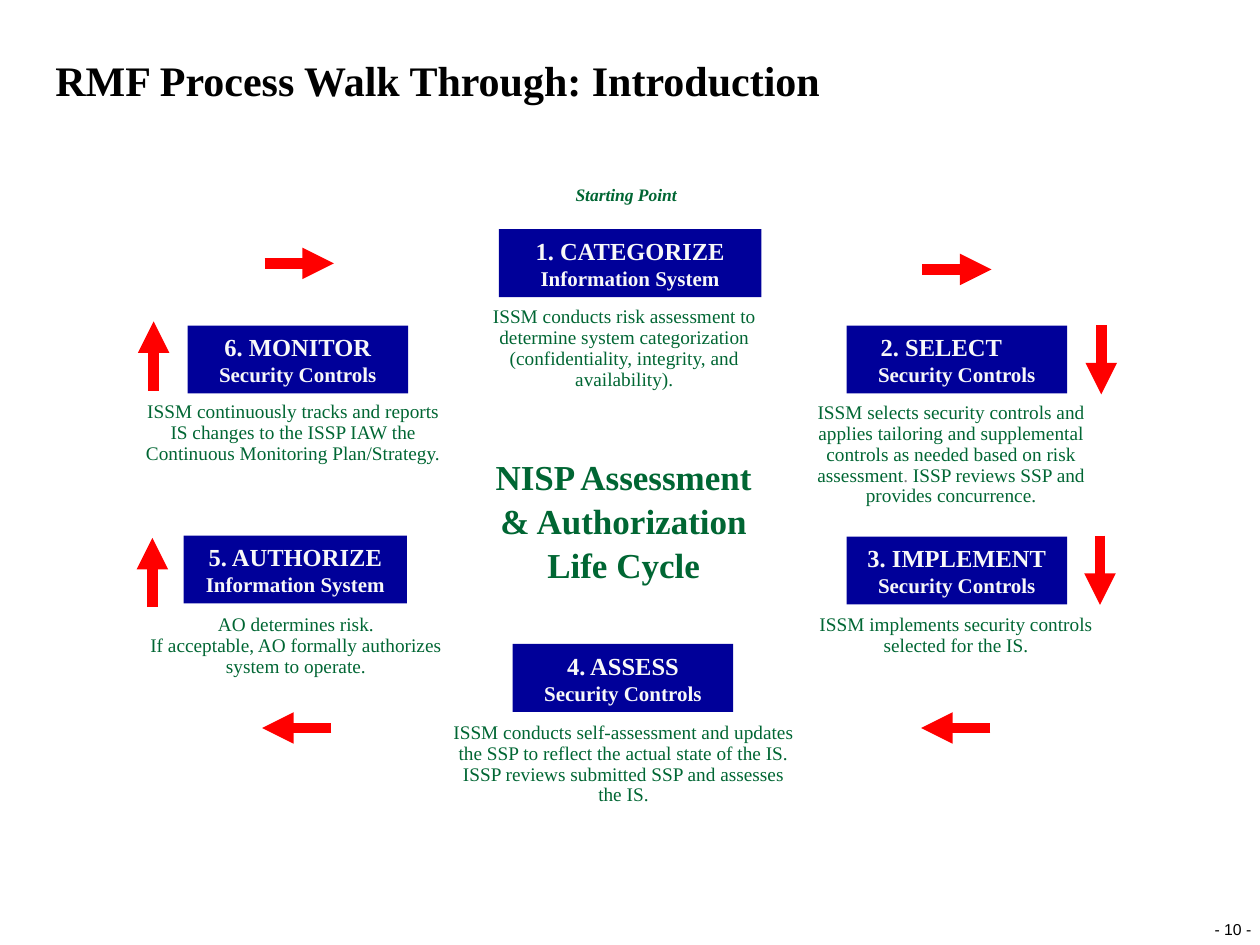
from dataclasses import dataclass

from lxml.etree import SubElement
from pptx import Presentation
from pptx.dml.color import RGBColor
from pptx.enum.shapes import MSO_CONNECTOR, MSO_SHAPE
from pptx.enum.text import MSO_ANCHOR, PP_ALIGN
from pptx.oxml.ns import qn
from pptx.util import Pt


@dataclass(frozen=True)
class Theme:
    font: str = "Times New Roman"
    footer_font: str = "Arial"
    black: str = "000000"
    green: str = "006633"
    navy: str = "000099"
    white: str = "F8F8F8"
    red: str = "FF0000"
    gray: str = "808080"
    title: int = 24
    hub: int = 20
    step: int = 14
    subject: int = 12
    caption: int = 11
    start: int = 10
    footer: int = 9
    arrow: int = 6


class SlideBuilder:
    def __init__(self, slide, theme):
        self.slide = slide
        self.theme = theme

    def style(self, span, size, color, bold=False, italic=False, font=None):
        span.font.name = font or self.theme.font
        span.font.size = Pt(size)
        span.font.color.rgb = RGBColor.from_string(color)
        span.font.bold = bold
        span.font.italic = italic

    def text(self, frame, words, size, color, spacing=1.0, align=PP_ALIGN.CENTER,
             inset=True, anchor=MSO_ANCHOR.TOP, wrap=True, **look):
        box = self.slide.shapes.add_textbox(*map(Pt, frame))
        body = box.text_frame
        body.text = words
        body.word_wrap = wrap
        body.vertical_anchor = anchor
        if not inset:
            body.margin_left = body.margin_right = 0
            body.margin_top = body.margin_bottom = 0
        for para in body.paragraphs:
            para.alignment = align
            para.line_spacing = spacing
            for span in para.runs:
                self.style(span, size, color, **look)
        return box

    def caption(self, left, top, width, height, words):
        return self.text((left, top, width, height), words,
                         self.theme.caption, self.theme.green, spacing=0.9)

    def step(self, left, top, width, name, subject):
        box = self.slide.shapes.add_shape(
            MSO_SHAPE.RECTANGLE, Pt(left), Pt(top), Pt(width), Pt(38.8))
        box.shadow.inherit = False
        box.fill.solid()
        box.fill.fore_color.rgb = RGBColor.from_string(self.theme.navy)
        box.line.fill.background()
        body = box.text_frame
        body.text = f"{name}\n{subject}"
        body.word_wrap = True
        body.vertical_anchor = MSO_ANCHOR.MIDDLE
        for para, size in zip(body.paragraphs, (self.theme.step, self.theme.subject)):
            para.alignment = PP_ALIGN.CENTER
            self.style(para.runs[0], size, self.theme.white, bold=True)
        return box

    def arrow(self, left, top, across, down):
        line = self.slide.shapes.add_connector(
            MSO_CONNECTOR.STRAIGHT, Pt(left), Pt(top), Pt(left + across), Pt(top + down))
        line.line.color.rgb = RGBColor.from_string(self.theme.red)
        line.line.width = Pt(self.theme.arrow)
        SubElement(line.line._get_or_add_ln(), qn("a:tailEnd"), type="triangle")
        SubElement(line._element.spPr, qn("a:effectLst"))


CONTROLS = "Security Controls"
SYSTEM = "Information System"

# Step boxes: left, top, width, name, subject
STEPS = [
    (285.1, 131, 150, "1. CATEGORIZE", SYSTEM),
    (483.8, 186, 126, "2. SELECT", CONTROLS),
    (483.8, 306.6, 126, "3. IMPLEMENT", CONTROLS),
    (293, 368, 126, "4. ASSESS", CONTROLS),
    (105, 306, 127.6, "5. AUTHORIZE", SYSTEM),
    (107.2, 186, 126, "6. MONITOR", CONTROLS),
]

# Captions: left, top, width, height, words
CAPTIONS = [
    (268.5, 172, 176.5, 55,
     "ISSM conducts risk assessment to determine system categorization "
     "(confidentiality, integrity, and availability)."),
    (448.5, 226.8, 190, 67,
     "ISSM selects security controls and applies tailoring and supplemental "
     "controls as needed based on risk assessment"),
    (447, 347.8, 198.7, 31,
     "ISSM implements security controls selected for the IS."),
    (249.8, 409.5, 213, 55,
     "ISSM conducts self-assessment and updates the SSP to reflect the actual state "
     "of the IS. ISSP reviews submitted SSP and assesses the IS."),
    (70.5, 347.8, 197.3, 43,
     "AO determines risk.\n"
     "If acceptable, AO formally authorizes system to operate."),
    (71, 226.3, 193, 43,
     "ISSM continuously tracks and reports IS changes to the ISSP IAW the "
     "Continuous Monitoring Plan/Strategy."),
]

# Arrows, clockwise: left, top, across, down
REACH = 39.6
ARROWS = [
    (527, 154, REACH, 0),
    (629.3, 185.8, 0, REACH),
    (628.6, 306, 0, REACH),
    (566, 416, -REACH, 0),
    (189.4, 416, -REACH, 0),
    (87.1, 347, 0, -REACH),
    (87.8, 223.2, 0, -REACH),
    (151.2, 150.5, REACH, 0),
]


def main():
    theme = Theme()
    deck = Presentation()
    deck.slide_width, deck.slide_height = Pt(720), Pt(540)
    page = SlideBuilder(deck.slides.add_slide(deck.slide_layouts[6]), theme)

    # Title and page number
    page.text((31.7, 34.6, 592, 26), "RMF Process Walk Through: Introduction",
              theme.title, theme.black, spacing=0.9, align=PP_ALIGN.LEFT,
              inset=False, anchor=MSO_ANCHOR.BOTTOM, bold=True)
    page.text((693.4, 525, 22.3, 11.5), "- 10 -", theme.footer, theme.black,
              spacing=1.06, inset=False, anchor=MSO_ANCHOR.BOTTOM, wrap=False,
              font=theme.footer_font)

    # Centre of the cycle and its starting point
    page.text((265.7, 255.6, 181.4, 80), "NISP Assessment & Authorization Life Cycle",
              theme.hub, theme.green, spacing=1.05, bold=True)
    page.text((306.7, 101.5, 102.2, 19.4), "Starting Point",
              theme.start, theme.green, bold=True, italic=True)

    # Cycle steps, captions and arrows
    boxes = [page.step(*step) for step in STEPS]
    captions = [page.caption(*caption) for caption in CAPTIONS]
    for arrow in ARROWS:
        page.arrow(*arrow)

    # The second step's name stands left of centre
    name = boxes[1].text_frame.paragraphs[0]
    name.alignment = PP_ALIGN.LEFT
    name._p.get_or_add_pPr().set("marL", str(Pt(12.4)))

    # The second caption goes on after a gray full stop
    para = captions[1].text_frame.paragraphs[0]
    for words, color in ((". ", theme.gray),
                         ("ISSP reviews SSP and provides concurrence.", theme.green)):
        span = para.add_run()
        span.text = words
        page.style(span, theme.caption, color)

    deck.save("out.pptx")


if __name__ == "__main__":
    main()
